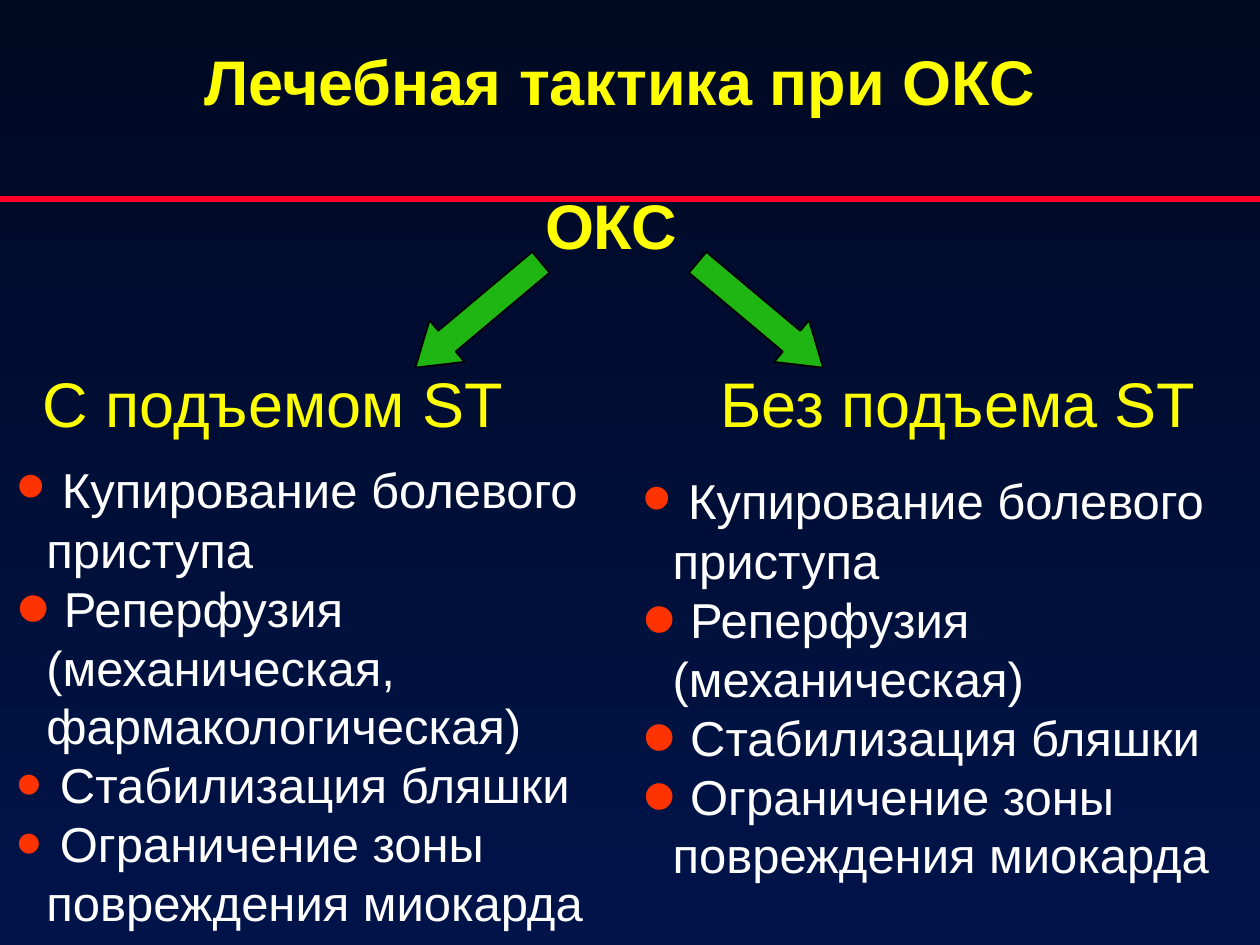
from dataclasses import dataclass

from lxml.etree import SubElement
from pptx import Presentation
from pptx.dml.color import RGBColor
from pptx.enum.shapes import MSO_CONNECTOR, MSO_SHAPE
from pptx.enum.text import PP_ALIGN
from pptx.oxml.ns import qn
from pptx.util import Inches, Pt

YELLOW = "FFFF00"
WHITE = "FFFFFF"


@dataclass
class Label:
    text: str
    left: float
    top: float
    width: float
    bold: bool = False
    align: PP_ALIGN = PP_ALIGN.LEFT
    pitch: float = 1.0


@dataclass
class Column:
    left: float
    top: float
    width: float
    height: float
    items: list[tuple[str, int]]


@dataclass
class Arrow:
    left: float
    angle: int


LABELS = [
    Label("Лечебная тактика при ОКС", 0.66, 0.36, 8.52, True,
          PP_ALIGN.CENTER, 0.9),
    Label("ОКС", 4.1, 1.43, 1.5, True, PP_ALIGN.CENTER),
    Label("С подъемом ST", 0.24, 2.84, 4.2),
    Label("Без подъема ST", 5.62, 2.84, 4.2),
]
COLUMNS = [
    Column(0.03, 3.54, 5.37, 3.94, [
        ("Купирование болевого приступа", 150),
        ("Реперфузия (механическая, фармакологическая)", 200),
        ("Стабилизация бляшки", 150),
        ("Ограничение зоны повреждения миокарда", 150),
    ]),
    Column(5, 3.63, 5, 3.47, [
        ("Купирование болевого приступа", 150),
        ("Реперфузия (механическая)", 200),
        ("Стабилизация бляшки", 200),
        ("Ограничение зоны повреждения миокарда", 200),
    ]),
]
ARROWS = [Arrow(3.58, 50), Arrow(5.82, 310)]


def paint(color, code: str) -> None:
    color.rgb = RGBColor.from_string(code)


def style(para, size: int, code: str, bold: bool = False) -> None:
    font = para.font
    font.name = "Arial"
    font.size = Pt(size)
    font.bold = bold
    paint(font.color, code)


def add_box(slide, left: float, top: float, width: float, height: float):
    box = slide.shapes.add_textbox(
        Inches(left), Inches(top), Inches(width), Inches(height))
    box.text_frame.word_wrap = True
    return box.text_frame


def add_label(slide, label: Label) -> None:
    frame = add_box(slide, label.left, label.top, label.width, 0.83)
    para = frame.paragraphs[0]
    para.text = label.text
    para.alignment = label.align
    para.line_spacing = label.pitch
    style(para, 36, YELLOW, label.bold)


def add_bullet(para, size: int) -> None:
    props = para._p.get_or_add_pPr()
    indent = Inches(0.24)
    props.set("marL", str(indent))
    props.set("indent", str(-indent))
    color = SubElement(props, qn("a:buClr"))
    SubElement(color, qn("a:srgbClr")).set("val", "FF3300")
    SubElement(props, qn("a:buSzPct")).set("val", str(size * 1000))
    SubElement(props, qn("a:buFont")).set("typeface", "Arial")
    SubElement(props, qn("a:buChar")).set("char", "•")


def add_column(slide, col: Column) -> None:
    frame = add_box(slide, col.left, col.top, col.width, col.height)
    for index, (text, size) in enumerate(col.items):
        para = frame.add_paragraph() if index else frame.paragraphs[0]
        add_bullet(para, size)
        style(para, 28, WHITE)
        lead = para.add_run()
        lead.text = " "
        if not index:
            lead.font.size = Pt(32)
        para.add_run().text = text


def add_arrow(slide, arrow: Arrow) -> None:
    shape = slide.shapes.add_shape(
        MSO_SHAPE.DOWN_ARROW, Inches(arrow.left), Inches(1.85),
        Inches(0.43), Inches(1.3))
    shape.shadow.inherit = False
    shape.rotation = arrow.angle
    shape.adjustments[0] = 0.5
    shape.adjustments[1] = 0.76
    shape.fill.solid()
    paint(shape.fill.fore_color, "1FB614")
    paint(shape.line.color, "000000")
    shape.line.width = Pt(1)


def add_rule(slide) -> None:
    rule = slide.shapes.add_connector(
        MSO_CONNECTOR.STRAIGHT, 0, Inches(1.58), Inches(10), Inches(1.58))
    paint(rule.line.color, "FC0128")
    rule.line.width = Pt(3)
    SubElement(rule._element.spPr, qn("a:effectLst"))


def set_back(slide) -> None:
    fill = slide.background.fill
    fill.gradient()
    fill.gradient_angle = 270
    for stop, code in zip(fill.gradient_stops, ("000922", "00144A")):
        paint(stop.color, code)


def main() -> None:
    deck = Presentation()
    deck.slide_width = Inches(10)
    deck.slide_height = Inches(7.5)
    slide = deck.slides.add_slide(deck.slide_layouts[6])
    set_back(slide)
    add_rule(slide)
    for label in LABELS:
        add_label(slide, label)
    for arrow in ARROWS:
        add_arrow(slide, arrow)
    for col in COLUMNS:
        add_column(slide, col)
    deck.save("out.pptx")


if __name__ == "__main__":
    main()
